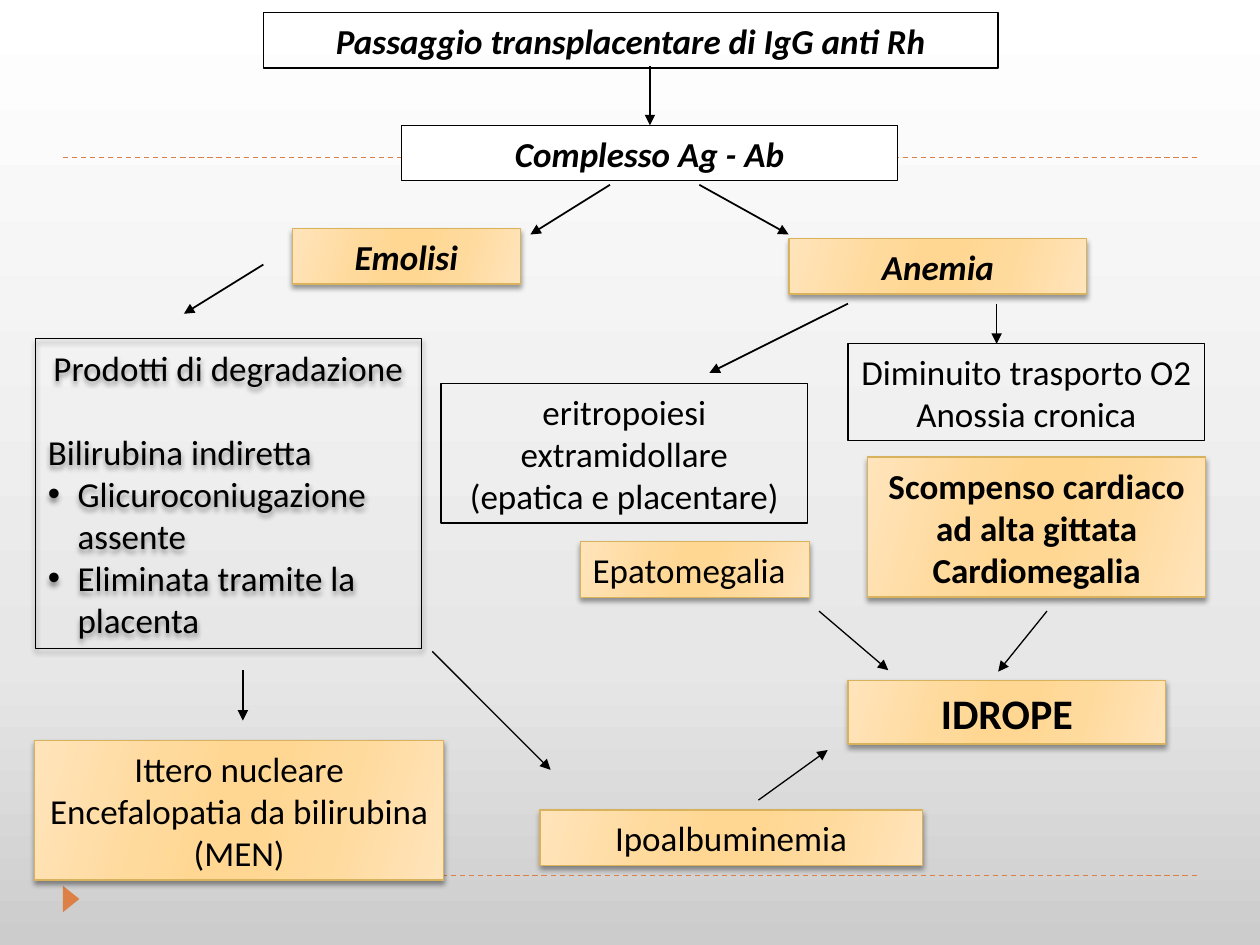
from lxml import etree
from pptx import Presentation
from pptx.dml.color import RGBColor
from pptx.enum.dml import MSO_LINE
from pptx.enum.shapes import MSO_CONNECTOR, MSO_SHAPE
from pptx.enum.text import MSO_ANCHOR, PP_ALIGN
from pptx.oxml import parse_xml
from pptx.oxml.ns import nsdecls, qn
from pptx.util import Pt

RECTANGLE, TRIANGLE = MSO_SHAPE.RECTANGLE, MSO_SHAPE.ISOSCELES_TRIANGLE
STRAIGHT, DASH = MSO_CONNECTOR.STRAIGHT, MSO_LINE.DASH
LEFT, CENTER, MIDDLE = PP_ALIGN.LEFT, PP_ALIGN.CENTER, MSO_ANCHOR.MIDDLE

COLORS = {"text": "000000", "accent": "DD8047", "gold": "D8B25C", "white": "FFFFFF"}
BACKGROUND = [(0, "CCCCCC"), (30, "E7E7E7"), (100, "FFFFFF")]
GOLD_FILL = [(0, "FFE4BB"), (30, "FFDA9D"), (45, "FFD793"),
             (55, "FFD793"), (73, "FFDA9D"), (100, "FFE4BB")]

TITLE = ("Passaggio transplacentare di IgG anti Rh", (150.5, 7.2, 419.8, 31.7))
PLAIN_BOXES = [
    (["eritropoiesi\vextramidollare\v(epatica e placentare)"], (252, 219, 209.5, 79.9), {}),
    (["Diminuito trasporto O2\vAnossia cronica"], (484.6, 196.5, 203.8, 55.4), {}),
    (["Complesso Ag - Ab"], (229.5, 71.6, 283.5, 31.7), {"bold": True, "italic": True}),
]
GOLD_BOXES = [
    (["Ipoalbuminemia"], (308.6, 462.9, 218.5, 31.7), {}),
    (["IDROPE"], (484.6, 388.8, 181.5, 36.4), {"size": 24, "bold": True}),
    (["Scompenso cardiaco\vad alta gittata\vCardiomegalia"],
     (495.9, 261.2, 193, 79.9), {"bold": True}),
    (["Epatomegalia"], (331.6, 309.6, 131.2, 31.7), {"align": LEFT, "wrap": False}),
    (["Anemia"], (450.9, 136.3, 170.1, 31.7), {"bold": True, "italic": True}),
    (["Emolisi"], (167, 130.7, 130.5, 31.7), {"bold": True, "italic": True}),
    (["Ittero nucleare", "Encefalopatia da bilirubina", "(MEN)"],
     (19.8, 423, 233.8, 79.9), {}),
]
PRODUCTS_PLACE = (20.2, 193.5, 220.5, 177)
PRODUCTS_HEADING = "Prodotti di degradazione"
PRODUCTS_SUBHEADING = "Bilirubina indiretta"
PRODUCTS_BULLETS = ["Glicuroconiugazione assente", "Eliminata tramite la placenta"]

ARROWS = [
    ((484.6, 173.5), (405.4, 213.1), 1),
    ((433.4, 457.2), (473, 428.6), 0.75),
    ((468, 349.2), (507.6, 383), 0.75),
    ((247, 372.2), (314.6, 439.9), 0.75),
    ((569.5, 173.5), (569.5, 196.5), 1),
    ((371.4, 37.6), (371.4, 71.6), 1),
    ((348.6, 105.6), (303.1, 134), 1),
    ((399.6, 105.6), (450.7, 134), 1),
    ((150.5, 151.2), (105.1, 179.3), 1),
    ((138.8, 383), (138.8, 411.8), 1),
    ((598.3, 349.2), (570.4, 383.8), 0.75),
]


def rgb(name):
    return RGBColor.from_string(COLORS[name])


def apply_gradient(properties, stops, angle):
    stop_xml = "".join(f'<a:gs pos="{position * 1000}"><a:srgbClr val="{color}"/></a:gs>'
                       for position, color in stops)
    gradient = parse_xml(f'<a:gradFill {nsdecls("a")} rotWithShape="1"><a:gsLst>{stop_xml}'
                         f'</a:gsLst><a:lin ang="{angle * 60000}" scaled="0"/></a:gradFill>')
    properties.replace(properties.find(qn("a:solidFill")), gradient)


def add_shadow(shape):
    shape._element.spPr.find(qn("a:effectLst")).append(parse_xml(
        f'<a:outerShdw {nsdecls("a")} blurRad="{Pt(3)}" dist="{Pt(2)}" dir="5400000" '
        'rotWithShape="0"><a:srgbClr val="000000"><a:alpha val="40000"/></a:srgbClr>'
        '</a:outerShdw>'))


def write(frame, paragraphs, size=20, bold=False, italic=False, align=CENTER, wrap=True):
    frame.word_wrap = wrap
    frame.vertical_anchor = MIDDLE
    frame.margin_left = frame.margin_right = Pt(7.2)
    frame.margin_top = frame.margin_bottom = Pt(3.6)
    for index, text in enumerate(paragraphs):
        paragraph = frame.paragraphs[0] if index == 0 else frame.add_paragraph()
        paragraph.text = text
        paragraph.alignment = align
        paragraph.line_spacing = 1
        paragraph.space_before = Pt(0)
        for run in paragraph.runs:
            run.font.name = "Calibri"
            run.font.size = Pt(size)
            run.font.bold = bold
            run.font.italic = italic
            run.font.color.rgb = rgb("text")


def add_box(slide, paragraphs, place, line="text", fill=None, **text_format):
    shape = slide.shapes.add_shape(RECTANGLE, *map(Pt, place))
    shape.shadow.inherit = False
    shape.line.color.rgb = rgb(line)
    shape.line.width = Pt(0.75)
    if fill:
        shape.fill.solid()
        shape.fill.fore_color.rgb = rgb(fill)
    else:
        shape.fill.background()
    write(shape.text_frame, paragraphs, **text_format)
    return shape


def add_line(slide, start, end, width, color="text"):
    connector = slide.shapes.add_connector(STRAIGHT, *map(Pt, start + end))
    connector.line.color.rgb = rgb(color)
    connector.line.width = Pt(width)
    etree.SubElement(connector._element.spPr, qn("a:effectLst"))
    return connector


def add_arrow(slide, start, end, width):
    line = add_line(slide, start, end, width).line
    etree.SubElement(line._get_or_add_ln(), qn("a:tailEnd"), type="triangle")


def add_decoration(slide):
    for height in (500.4, 90):
        add_line(slide, (36, height), (684, height), 0.75, "accent").line.dash_style = DASH
    marker = slide.shapes.add_shape(TRIANGLE, Pt(33.1), Pt(509), Pt(15.1), Pt(9.4))
    marker.rotation = 90
    marker.shadow.inherit = False
    marker.fill.solid()
    marker.fill.fore_color.rgb = rgb("accent")
    marker.line.fill.background()


def add_title(slide):
    text, place = TITLE
    title = slide.shapes.title
    title.left, title.top, title.width, title.height = map(Pt, place)
    title.line.color.rgb = rgb("text")
    title.line.width = Pt(0.75)
    write(title.text_frame, [text], bold=True, italic=True)


def add_products(slide):
    shape = add_box(slide, [PRODUCTS_HEADING, PRODUCTS_SUBHEADING, *PRODUCTS_BULLETS],
                    PRODUCTS_PLACE, align=LEFT)
    add_shadow(shape)
    heading, subheading, *bullets = shape.text_frame.paragraphs
    heading.alignment = CENTER
    subheading.space_before = Pt(24)
    for paragraph in bullets:
        properties = paragraph._p.get_or_add_pPr()
        properties.set("marL", str(Pt(17)))
        properties.set("indent", str(Pt(-17)))
        etree.SubElement(properties, qn("a:buFont"), typeface="Arial")
        etree.SubElement(properties, qn("a:buChar"), char="•")


def main():
    presentation = Presentation()
    presentation.slide_width, presentation.slide_height = Pt(720), Pt(540)
    slide = presentation.slides.add_slide(presentation.slide_layouts[5])
    slide.background.fill.solid()
    slide.background.fill.fore_color.rgb = rgb("white")
    apply_gradient(slide._element.cSld.bg.bgPr, BACKGROUND, 270)
    add_decoration(slide)
    add_title(slide)
    for paragraphs, place, text_format in PLAIN_BOXES:
        fill = "white" if paragraphs == ["Complesso Ag - Ab"] else None
        add_box(slide, paragraphs, place, fill=fill, **text_format)
    for paragraphs, place, text_format in GOLD_BOXES:
        shape = add_box(slide, paragraphs, place, line="gold", fill="gold", **text_format)
        apply_gradient(shape._element.spPr, GOLD_FILL, 16)
        add_shadow(shape)
    add_products(slide)
    for arrow in ARROWS:
        add_arrow(slide, *arrow)
    presentation.save("out.pptx")


if __name__ == "__main__":
    main()
